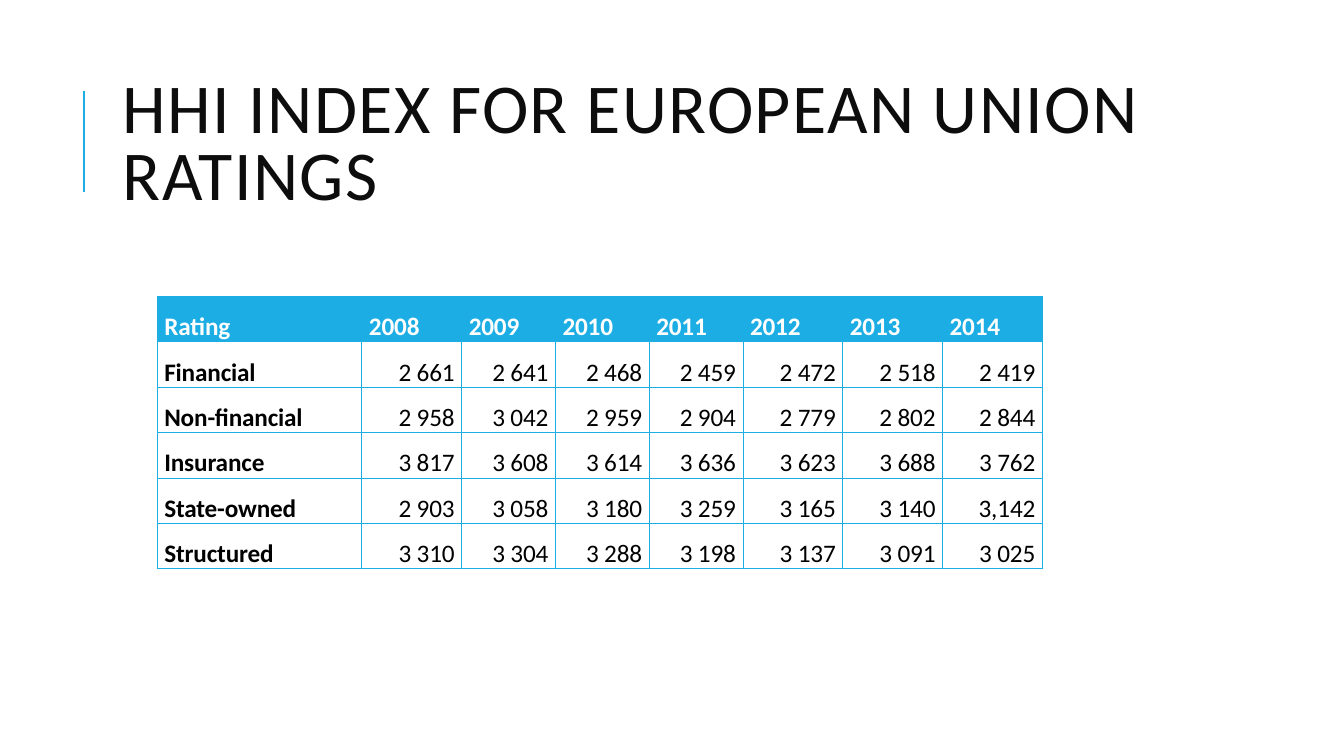
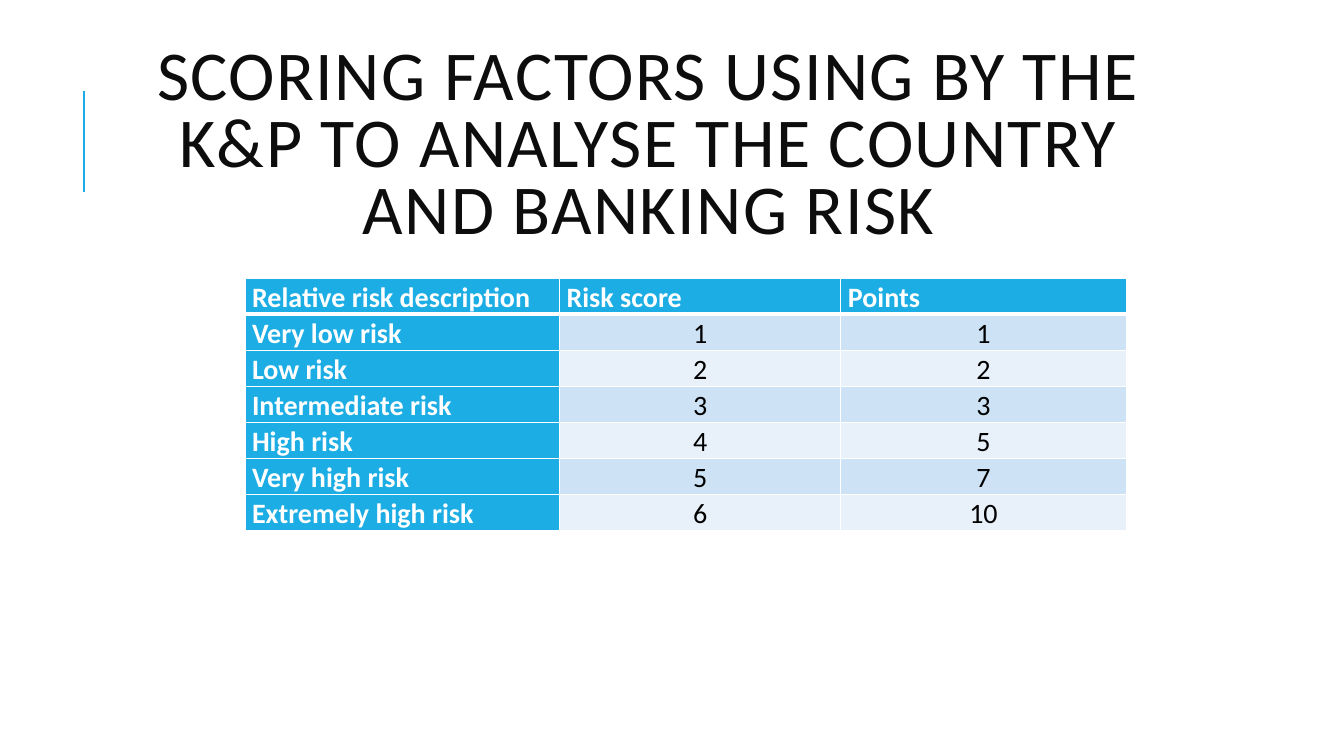
import pptx
import pptx.util
import pptx.dml.color
import pptx.enum.shapes
import pptx.enum.text
import pptx.oxml
import pptx.oxml.ns
from pptx.util import Inches

ALIGN = pptx.enum.text.PP_ALIGN
COLORS = {
    "accent": "1CADE4",
    "title": "0D0D0D",
    "text": "000000",
    "white": "FFFFFF",
    "band_dark": "CDE3F5",
    "band_light": "E8F1FA",
}


def rgb(name):
    return pptx.dml.color.RGBColor.from_string(COLORS[name])


class Deck:
    """Holds the shared style and the current slide."""

    font = "Calibri"

    def __init__(self):
        self.presentation = pptx.Presentation()
        self.presentation.slide_width = Inches(13.33)
        self.presentation.slide_height = Inches(7.5)
        self.slide = None

    def add_slide(self, title, align=ALIGN.LEFT):
        self.slide = self.presentation.slides.add_slide(self.presentation.slide_layouts[6])
        self.add_title_rule()
        self.add_title(title, align)

    def add_title_rule(self):
        rule = self.slide.shapes.add_connector(
            pptx.enum.shapes.MSO_CONNECTOR.STRAIGHT,
            Inches(0.83), Inches(1.9), Inches(0.83), Inches(0.9))
        rule.line.color.rgb = rgb("accent")
        rule.line.width = pptx.util.Pt(1.5)
        properties = rule._element.spPr
        properties.append(pptx.oxml.parse_xml(
            f'<a:effectLst {pptx.oxml.ns.nsdecls("a")}/>'))

    def add_title(self, title, align):
        box = self.slide.shapes.add_textbox(
            Inches(1.12), Inches(0.64), Inches(10.63), Inches(1.64))
        frame = box.text_frame
        frame.word_wrap = True
        frame.vertical_anchor = pptx.enum.text.MSO_ANCHOR.MIDDLE
        frame.text = title
        self.format_paragraph(frame.paragraphs[0], align, 0.8, 50, "title", tracking=1)

    def format_paragraph(self, paragraph, align, line_spacing, size, color,
                         bold=False, tracking=0):
        paragraph.alignment = align
        paragraph.line_spacing = line_spacing
        for run in paragraph.runs:
            run.font.name = self.font
            run.font.size = pptx.util.Pt(size)
            run.font.bold = bold
            run.font.color.rgb = rgb(color)
            if tracking:
                run.font._element.set("spc", str(round(tracking * 100)))

    def add_table(self, left, top, columns, heights, rows, cell_style):
        """cell_style(row, column) gives the fill, text and border settings."""
        frame = self.slide.shapes.add_table(
            len(rows), len(columns), Inches(left), Inches(top),
            Inches(sum(columns)), Inches(sum(heights)))
        table = frame.table
        table.first_row = table.horz_banding = False
        for column, width in zip(table.columns, columns):
            column.width = Inches(width)
        for row, height in zip(table.rows, heights):
            row.height = Inches(height)
        for row_index, values in enumerate(rows):
            for column_index, value in enumerate(values):
                cell = table.cell(row_index, column_index)
                fill, text_style, borders = cell_style(row_index, column_index)
                self.fill_cell(cell, value, fill, text_style)
                self.border_cell(cell, *borders)

    def fill_cell(self, cell, value, fill, text_style):
        cell.margin_left = cell.margin_right = Inches(0.07)
        cell.margin_top = cell.margin_bottom = 0
        if fill:
            cell.fill.solid()
            cell.fill.fore_color.rgb = rgb(fill)
        else:
            cell.fill.background()
        cell.text_frame.text = value
        self.format_paragraph(cell.text_frame.paragraphs[0], **text_style)

    def border_cell(self, cell, color, width, top=None, bottom=None):
        properties = cell._tc.get_or_add_tcPr()
        widths = {"lnL": width, "lnR": width, "lnT": top or width, "lnB": bottom or width}
        for position, (side, points) in enumerate(widths.items()):
            properties.insert(position, pptx.oxml.parse_xml(
                f'<a:{side} {pptx.oxml.ns.nsdecls("a")} w="{pptx.util.Pt(points)}">'
                f'<a:solidFill><a:srgbClr val="{COLORS[color]}"/></a:solidFill></a:{side}>'))


def index_cell(row, column):
    header = row == 0
    text_style = {
        "align": ALIGN.JUSTIFY if header or column == 0 else ALIGN.RIGHT,
        "line_spacing": 1.5,
        "size": 18,
        "color": "white" if header else "text",
        "bold": header or column == 0,
        "tracking": -0.1,
    }
    return "accent" if header else None, text_style, ("accent", 0.75)


def score_cell(row, column):
    heading = row == 0 or column == 0
    band = "band_dark" if row % 2 else "band_light"
    text_style = {
        "align": ALIGN.LEFT if heading else ALIGN.CENTER,
        "line_spacing": 1.07,
        "size": 20,
        "color": "white" if heading else "text",
        "bold": heading,
    }
    # A thicker line parts the header from the body
    borders = ("white", 1, 3 if row == 1 else None, 3 if row == 0 else None)
    return "accent" if heading else band, text_style, borders


INDEX_ROWS = [
    ["Rating", "2008", "2009", "2010", "2011", "2012", "2013", "2014"],
    ["Financial", "2 661", "2 641", "2 468", "2 459", "2 472", "2 518", "2 419"],
    ["Non-financial", "2 958", "3 042", "2 959", "2 904", "2 779", "2 802", "2 844"],
    ["Insurance", "3 817", "3 608", "3 614", "3 636", "3 623", "3 688", "3 762"],
    ["State-owned", "2 903", "3 058", "3 180", "3 259", "3 165", "3 140", "3,142"],
    ["Structured", "3 310", "3 304", "3 288", "3 198", "3 137", "3 091", "3 025"],
]
SCORE_ROWS = [
    ["Relative risk description", "Risk score", "Points"],
    ["Very low risk", "1", "1"],
    ["Low risk", "2", "2"],
    ["Intermediate risk", "3", "3"],
    ["High risk", "4", "5"],
    ["Very high risk", "5", "7"],
    ["Extremely high risk", "6", "10"],
]


def main():
    deck = Deck()

    # Concentration index by rating
    deck.add_slide("HHI INDEX FOR EUROPEAN UNION RATINGS")
    deck.add_table(1.56, 2.94, [2.03, 0.99] + [0.93] * 3 + [0.99] * 3,
                   [0.39] * len(INDEX_ROWS), INDEX_ROWS, index_cell)

    # Risk scores
    deck.add_slide("SCORING FACTORS USING BY THE K&P TO ANALYSE THE COUNTRY AND BANKING RISK",
                   ALIGN.CENTER)
    deck.add_table(2.43, 2.76, [3.12, 2.79, 2.83],
                   [0.24] + [0.35] * (len(SCORE_ROWS) - 1), SCORE_ROWS, score_cell)

    deck.presentation.save("out.pptx")


if __name__ == "__main__":
    main()
